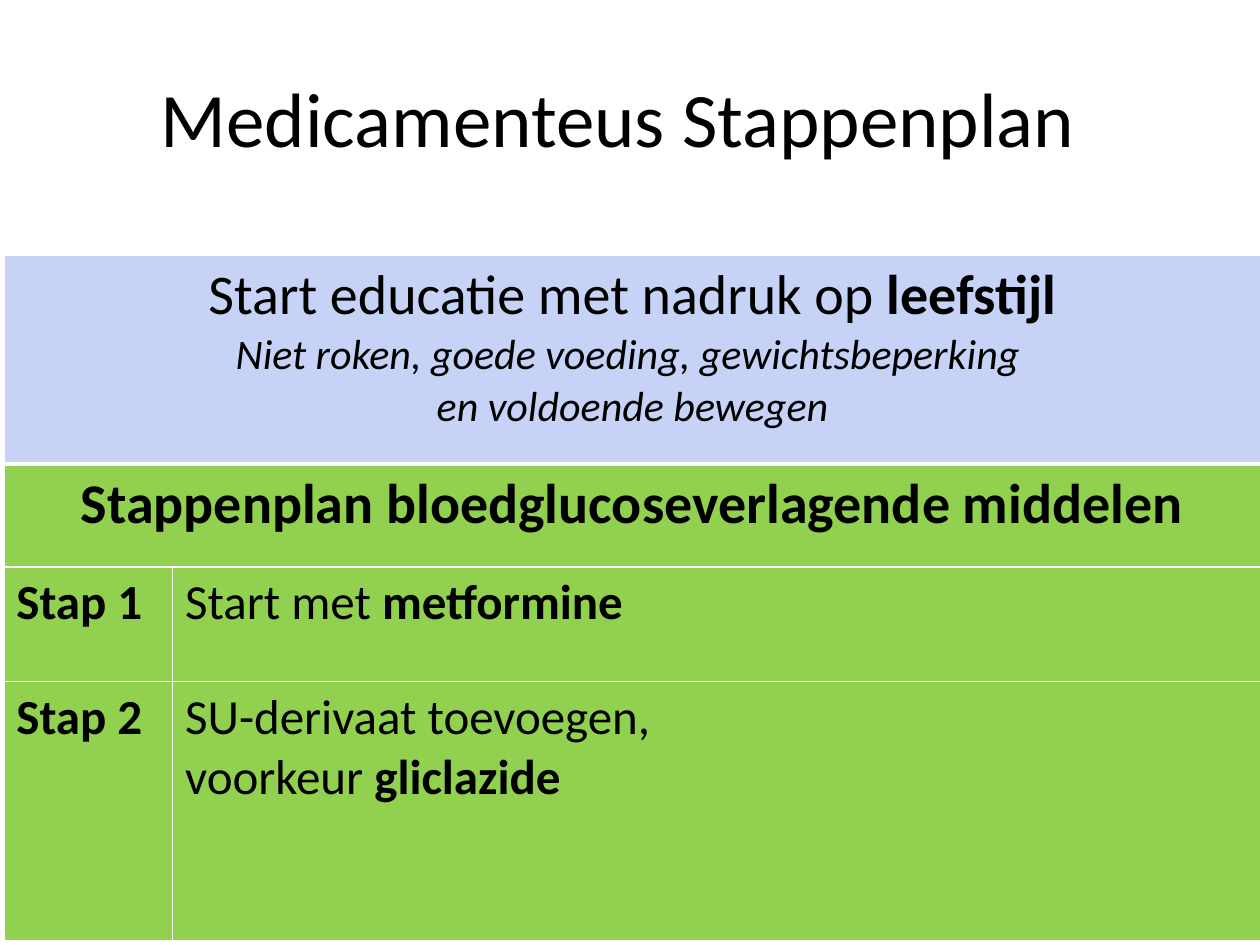
"""Builds a slide with a title and a stepped treatment table."""
from dataclasses import dataclass

from lxml import etree
from pptx import Presentation
from pptx import util as u
from pptx.dml.color import RGBColor
from pptx.enum import text
from pptx.oxml.ns import qn

COLORS = {"ink": "000000", "line": "FFFFFF", "advice": "C6D3F6", "step": "92D050"}
FONT = "Calibri"
WIDTH, HEIGHT = u.Inches(10), u.Inches(7.5)
COL_SHARES = (0.134, 0.864)
ROW_SHARES = (0.221, 0.109, 0.121, 0.275)
SIDES = ("L", "R", "T", "B")
BANNER_BORDER = {"B": 3}


@dataclass
class Run:
    text: str
    size: int = 28
    bold: bool = False
    italic: bool = False


@dataclass
class Cell:
    row: int
    col: int
    fill: str
    lines: list[list[Run]]
    span: int = 1
    centered: bool = False


CELLS = [
    Cell(0, 0, "advice", [
        [Run("Start educatie met nadruk op ", 32), Run("leefstijl", 32, True)],
        [Run("Niet roken, goede voeding, gewichtsbeperking ", 24, italic=True)],
        [Run("en voldoende bewegen", 24, italic=True)],
    ], span=2, centered=True),
    Cell(1, 0, "step", [[Run("Stappenplan bloedglucoseverlagende middelen", 32, True)]],
         span=2, centered=True),
    Cell(2, 0, "step", [[Run("Stap 1", bold=True)]]),
    Cell(2, 1, "step", [[Run("Start met "), Run("metformine", bold=True)]]),
    Cell(3, 0, "step", [[Run("Stap 2", bold=True)]]),
    Cell(3, 1, "step", [
        [Run("SU-derivaat toevoegen,")],
        [Run("voorkeur "), Run("gliclazide", bold=True)],
    ]),
]


def write(tf, lines: list[list[Run]], centered: bool) -> None:
    """Fill a text frame with formatted lines."""
    for i, line in enumerate(lines):
        p = tf.paragraphs[0] if i == 0 else tf.add_paragraph()
        p.alignment = text.PP_ALIGN.CENTER if centered else text.PP_ALIGN.LEFT
        for item in line:
            r = p.add_run()
            r.text = item.text
            formats = {"name": FONT, "size": u.Pt(item.size),
                       "bold": item.bold, "italic": item.italic}
            for key, value in formats.items():
                setattr(r.font, key, value)
            r.font.color.rgb = RGBColor.from_string(COLORS["ink"])


def add_borders(cell, widths: dict[str, int]) -> None:
    """Draw the four cell borders, one point wide unless stated."""
    tc_pr = cell._tc.get_or_add_tcPr()
    for i, side in enumerate(SIDES):
        ln = etree.Element(qn(f"a:ln{side}"), w=str(u.Pt(widths.get(side, 1))))
        fill = etree.SubElement(ln, qn("a:solidFill"))
        etree.SubElement(fill, qn("a:srgbClr"), val=COLORS["line"])
        tc_pr.insert(i, ln)


def add_title(s, line: list[Run]) -> None:
    """Place and write the title placeholder."""
    sp = s.shapes.title
    place = {"left": 0.012 * WIDTH, "top": 0.04 * HEIGHT,
             "width": 0.971 * WIDTH, "height": 0.167 * HEIGHT}
    for key, value in place.items():
        setattr(sp, key, u.Emu(int(value)))
    sp.text_frame.vertical_anchor = text.MSO_ANCHOR.MIDDLE
    write(sp.text_frame, [line], centered=True)


def add_plan(s, cells: list[Cell]) -> None:
    """Add the table and fill its cells."""
    widths = [int(share * WIDTH) for share in COL_SHARES]
    heights = [int(share * HEIGHT) for share in ROW_SHARES]
    table = s.shapes.add_table(len(heights), len(widths), int(0.003 * WIDTH),
                               int(0.27 * HEIGHT), sum(widths), sum(heights)).table
    for col, width in zip(table.columns, widths):
        col.width = width
    for row, height in zip(table.rows, heights):
        row.height = height
    for item in cells:
        cell = table.cell(item.row, item.col)
        if item.span > 1:
            cell.merge(table.cell(item.row, item.col + item.span - 1))
        cell.fill.solid()
        cell.fill.fore_color.rgb = RGBColor.from_string(COLORS[item.fill])
        add_borders(cell, BANNER_BORDER if item.row == 0 else {})
        write(cell.text_frame, item.lines, item.centered)


def main() -> None:
    """Build and save the slide."""
    prs = Presentation()
    prs.slide_width, prs.slide_height = WIDTH, HEIGHT
    s = prs.slides.add_slide(prs.slide_layouts[5])
    add_title(s, [Run("Medicamenteus Stappenplan ", 44)])
    add_plan(s, CELLS)
    prs.save("out.pptx")


if __name__ == "__main__":
    main()
